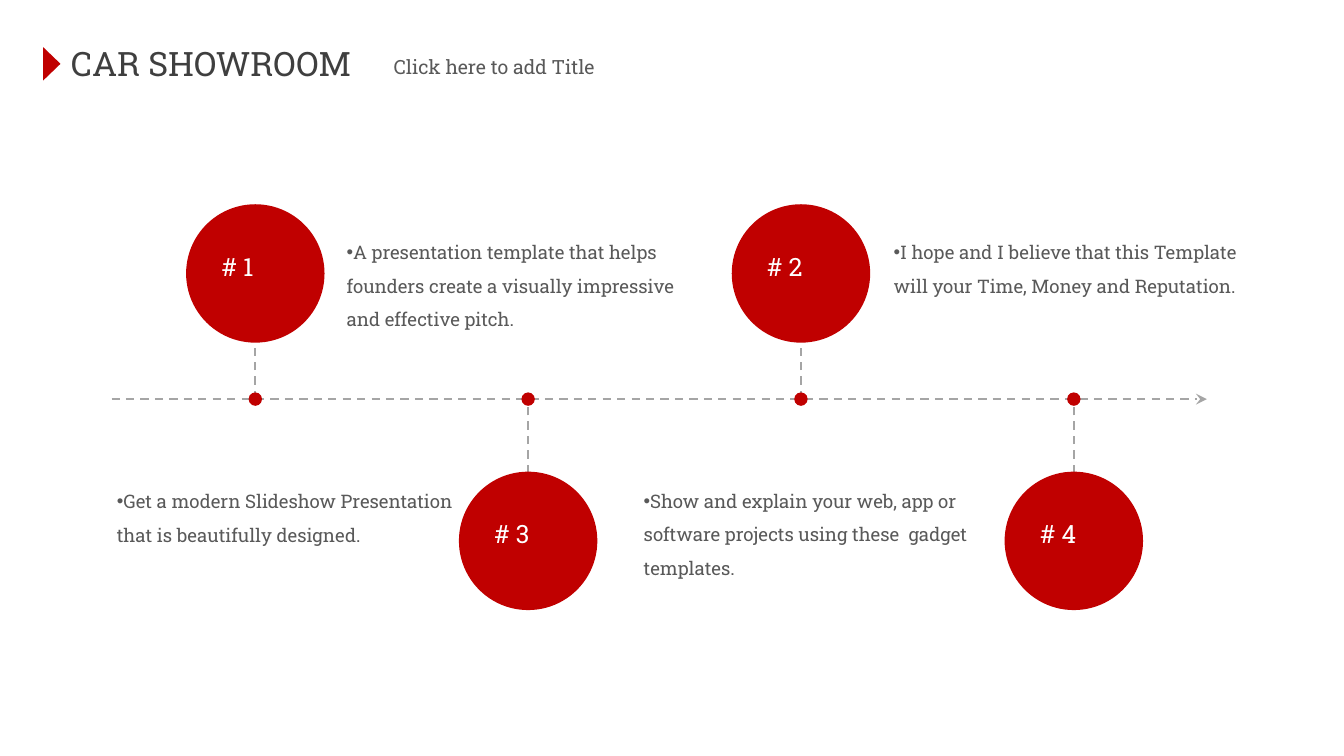
"""Build a car showroom timeline slide with four numbered milestones."""
from dataclasses import dataclass

from lxml import etree
from pptx import Presentation
from pptx.dml.color import RGBColor
from pptx.enum import dml, shapes, text
from pptx.oxml import ns
from pptx.util import Inches, Pt


@dataclass(frozen=True)
class Theme:
    """Colours, font and type sizes of the slide."""
    red: str = "C00000"
    axis: str = "A5A5A5"
    heading: str = "3F3F3F"
    body: str = "595959"
    white: str = "FFFFFF"
    font: str = "Roboto Slab"
    bullet_font: str = "Arial"
    heading_size: float = 18
    subtitle_size: float = 10.5
    label_size: float = 13.5
    body_size: float = 10
    line_width: float = 1.1


THEME = Theme()
AXIS_Y = 2.97
FIRST_X, STEP_X = 1.9, 2.03
CIRCLE, DOT = 1.03, 0.1
UPPER_Y, LOWER_Y = 1.52, 3.51

MILESTONES = [
    ("# 1", 0, 2.51, 0.8, "A presentation template that helps founders create "
     "a visually impressive and effective pitch."),
    ("# 2", 2, 6.58, 0.55, "I hope and I believe that this Template will your "
     "Time, Money and Reputation."),
    ("# 3", 1, 0.8, 0.55, "Get a modern Slideshow Presentation that is "
     "beautifully designed."),
    ("# 4", 3, 4.72, 0.8, "Show and explain your web, app or software projects "
     "using these  gadget templates."),
]


def add_xml(parent, tag, **attributes):
    """Append a DrawingML child element."""
    return etree.SubElement(parent, ns.qn(tag), attributes)


def add_dashed_line(slide, start, end, arrow=False):
    """Draw a dashed grey connector, optionally with an arrowhead."""
    line = slide.shapes.add_connector(
        shapes.MSO_CONNECTOR.STRAIGHT, *map(Inches, start + end))
    line.line.color.rgb = RGBColor.from_string(THEME.axis)
    line.line.width = Pt(THEME.line_width)
    line.line.dash_style = dml.MSO_LINE.DASH
    if arrow:
        add_xml(line.line._get_or_add_ln(), "a:tailEnd", type="stealth")
    add_xml(line._element.spPr, "a:effectLst")


def add_red_shape(slide, kind, left, top, width, height):
    """Draw a borderless red preset shape."""
    shape = slide.shapes.add_shape(
        kind, *map(Inches, (left, top, width, height)))
    shape.shadow.inherit = False
    shape.fill.solid()
    shape.fill.fore_color.rgb = RGBColor.from_string(THEME.red)
    shape.line.fill.background()
    return shape


def write(frame, words, size, color, insets):
    """Write one left-aligned run and return its paragraph."""
    frame.word_wrap = True
    frame.vertical_anchor = text.MSO_ANCHOR.TOP
    frame.margin_left, frame.margin_top, frame.margin_right, frame.margin_bottom = (
        map(Inches, insets))
    paragraph = frame.paragraphs[0]
    paragraph.alignment = text.PP_ALIGN.LEFT
    run = paragraph.add_run()
    run.text = words
    run.font.size = Pt(size)
    run.font.name = THEME.font
    run.font.color.rgb = RGBColor.from_string(color)
    return paragraph


def add_text(slide, box, words, size, color, insets=(0.1, 0.05, 0.1, 0.05)):
    """Add a text box and return its paragraph."""
    caption = slide.shapes.add_textbox(*map(Inches, box))
    return write(caption.text_frame, words, size, color, insets)


def add_description(slide, box, words):
    """Add a bulleted milestone description."""
    paragraph = add_text(slide, box, words, THEME.body_size, THEME.body,
                         (0.07, 0.04, 0.07, 0.04))
    paragraph.line_spacing = 1.5
    properties = paragraph._p.get_or_add_pPr()
    properties.set("marL", "0")
    properties.set("indent", str(Inches(-0.07)))
    bullet_color = add_xml(properties, "a:buClr")
    add_xml(bullet_color, "a:srgbClr", val=THEME.body)
    add_xml(properties, "a:buFont", typeface=THEME.bullet_font)
    add_xml(properties, "a:buChar", char="•")


def add_milestone(slide, label, slot, text_left, text_height, words):
    """Add a stem, axis dot, description and numbered circle."""
    center = FIRST_X + slot * STEP_X
    is_upper = slot % 2 == 0
    top = UPPER_Y if is_upper else LOWER_Y
    stem = (AXIS_Y, 2.4) if is_upper else (3.52, 2.95)
    add_dashed_line(slide, (center, stem[0]), (center, stem[1]))
    oval = shapes.MSO_SHAPE.OVAL
    add_red_shape(slide, oval, center - DOT / 2, AXIS_Y - DOT / 2, DOT, DOT)
    text_top = 1.67 if is_upper else 3.52
    add_description(slide, (text_left, text_top, 2.74, text_height), words)
    add_red_shape(slide, oval, center - CIRCLE / 2, top, CIRCLE, CIRCLE)
    number = add_red_shape(slide, shapes.MSO_SHAPE.RECTANGLE,
                           center - 0.35, top + 0.3, 0.49, 0.33)
    write(number.text_frame, label, THEME.label_size, THEME.white,
          (0.1, 0.05, 0.1, 0.05))


def add_header(slide):
    """Add the heading, its marker and the subtitle."""
    add_text(slide, (0.43, 0.27, 2.3, 0.4), "CAR SHOWROOM",
             THEME.heading_size, THEME.heading)
    marker = add_red_shape(slide, shapes.MSO_SHAPE.ISOSCELES_TRIANGLE,
                           0.26, 0.41, 0.25, 0.13)
    marker.rotation = 90
    add_text(slide, (2.76, 0.36, 1.83, 0.28), "Click here to add Title",
             THEME.subtitle_size, THEME.body, (0.17, 0.05, 0.1, 0.05))


def main():
    """Build and save the slide."""
    deck = Presentation()
    deck.slide_width = Inches(10)
    deck.slide_height = deck.slide_width * 9 // 16
    slide = deck.slides.add_slide(deck.slide_layouts[6])
    add_dashed_line(slide, (0.83, AXIS_Y), (8.98, AXIS_Y), arrow=True)
    for milestone in MILESTONES:
        add_milestone(slide, *milestone)
    add_header(slide)
    deck.save("out.pptx")


if __name__ == "__main__":
    main()
